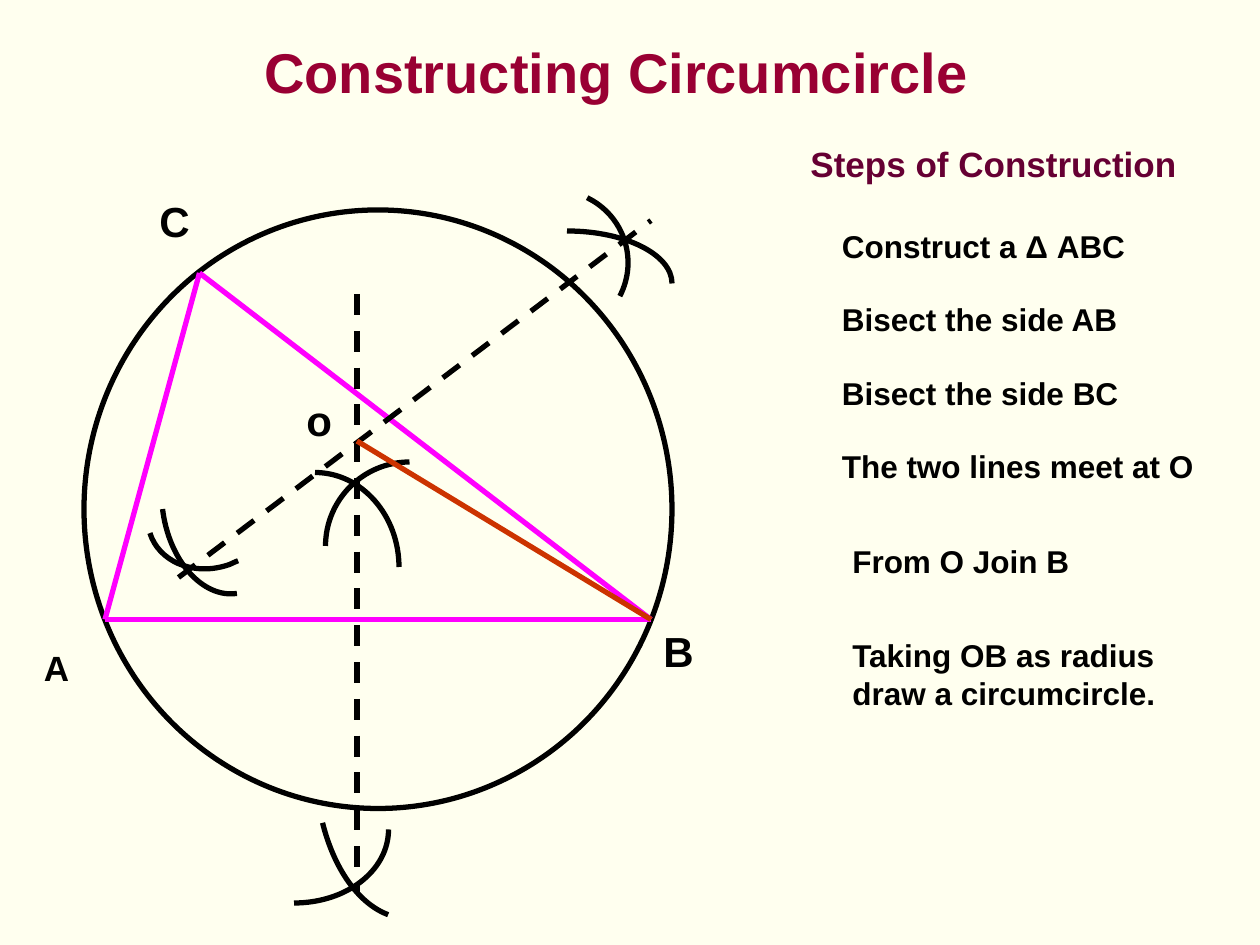
from lxml.etree import SubElement
from pptx import Presentation
from pptx.dml.color import RGBColor as Rgb
from pptx.enum.dml import MSO_LINE_DASH_STYLE as Dash
from pptx.enum.shapes import MSO_CONNECTOR as Connector, MSO_SHAPE as Shape
from pptx.oxml.ns import qn
from pptx.util import Pt

COLOURS = {
    "paper": "FFFFEF",
    "ink": "000000",
    "triangle": "FF00FF",
    "radius": "CC3300",
    "title": "990033",
    "heading": "660033",
}


class Drawing:
    font = {"name": "Arial", "bold": True}
    stroke = {"width": Pt(3)}

    def __init__(self, page):
        self.page = page
        page.background.fill.solid()
        page.background.fill.fore_color.rgb = self.colour("paper")

    def colour(self, name):
        return Rgb.from_string(COLOURS[name])

    def outline(self, item, colour="ink", **extra):
        item.line.color.rgb = self.colour(colour)
        for key, value in {**self.stroke, **extra}.items():
            setattr(item.line, key, value)

    def circle(self, left, top, width, height):
        oval = self.page.shapes.add_shape(
            Shape.OVAL, Pt(left), Pt(top), Pt(width), Pt(height))
        oval.shadow.inherit = False
        oval.fill.background()
        self.outline(oval)

    def segment(self, start, end, colour="ink", **extra):
        line = self.page.shapes.add_connector(
            Connector.STRAIGHT, *map(Pt, start + end))
        self.outline(line, colour, **extra)
        SubElement(line._element.spPr, qn("a:effectLst"))

    def arc(self, start, *controls):
        builder = self.page.shapes.build_freeform(*map(Pt, start))
        builder.add_line_segments(
            [tuple(map(Pt, point)) for point in controls], close=False)
        curve = builder.convert_to_shape()
        curve.shadow.inherit = False
        curve.fill.background()
        self.outline(curve)
        steps = list(curve._element.iter(qn("a:lnTo")))
        for first in range(0, len(steps), 3):
            bezier = SubElement(steps[first].getparent(), qn("a:cubicBezTo"))
            for step in steps[first:first + 3]:
                bezier.append(step[0])
                step.getparent().remove(step)

    def text(self, words, left, top, width, height, size, colour="ink", wrap=True):
        box = self.page.shapes.add_textbox(
            Pt(left), Pt(top), Pt(width), Pt(height))
        box.text_frame.word_wrap = wrap
        para = box.text_frame.paragraphs[0]
        span = para.add_run()
        span.text = words
        for key, value in {**self.font, "size": Pt(size)}.items():
            setattr(span.font, key, value)
        span.font.color.rgb = self.colour(colour)


def main():
    deck = Presentation()
    deck.slide_width, deck.slide_height = Pt(720), Pt(540)
    drawing = Drawing(deck.slides.add_slide(deck.slide_layouts[6]))

    a, b, c, o = (60, 354), (372, 354), (114, 156), (204, 252)
    drawing.circle(48, 120, 336, 342)
    for start, end in ((a, b), (b, c), (c, a)):
        drawing.segment(start, end, "triangle")

    bisectors = (((204, 168), (204, 510)), ((102, 330), (372, 126)))
    for start, end in bisectors:
        drawing.segment(start, end, dash_style=Dash.DASH)

    compass_arcs = (
        ((180, 270), (206.6, 270), (228, 294.5), (228, 324)),
        ((168, 516), (198, 516), (222, 497.5), (222, 474)),
        ((234, 264), (207.4, 264), (186, 285.8), (186, 312)),
        ((221.8, 522.7), (204.5, 516.2), (190.8, 496.1), (184.3, 470.2)),
        ((354.2, 169.2), (365, 148.3), (356.4, 123.1), (335.5, 113)),
        ((135.4, 339.1), (115.9, 342), (96.5, 320.4), (92.9, 290.9)),
        ((324, 132), (357.1, 132), (384, 145.4), (384, 162)),
        ((136.1, 320.4), (133.9, 321.1), (131.8, 322.6), (128.9, 323.3),
         (109.4, 329), (90.7, 320.4), (85.7, 304.6)),
    )
    for points in compass_arcs:
        drawing.arc(*points)
    drawing.segment(o, b, "radius")

    drawing.text("A", 18, 366, 30, 31, 20)
    drawing.text("B", 372, 354, 30, 36, 24)
    drawing.text("C", 84, 108, 36, 36, 24)
    drawing.text("o", 168, 222, 29, 36, 24, wrap=False)
    drawing.text("Constructing Circumcircle", 144, 18, 432, 45, 32, "title")
    drawing.text("Steps of Construction", 456, 78, 264, 31, 20, "heading")

    bisecting = ("Construct a Δ ABC", "Bisect the side AB",
                 "Bisect the side BC", "The two lines meet at O")
    for row, words in enumerate(bisecting):
        drawing.text(words, 474, 126 + 42 * row, 222, 29, 18)
    drawing.text("From O Join B", 480, 306, 186, 29, 18)
    drawing.text("Taking OB as radius draw a circumcircle.", 480, 360, 222, 50, 18)

    deck.save("out.pptx")


if __name__ == "__main__":
    main()
